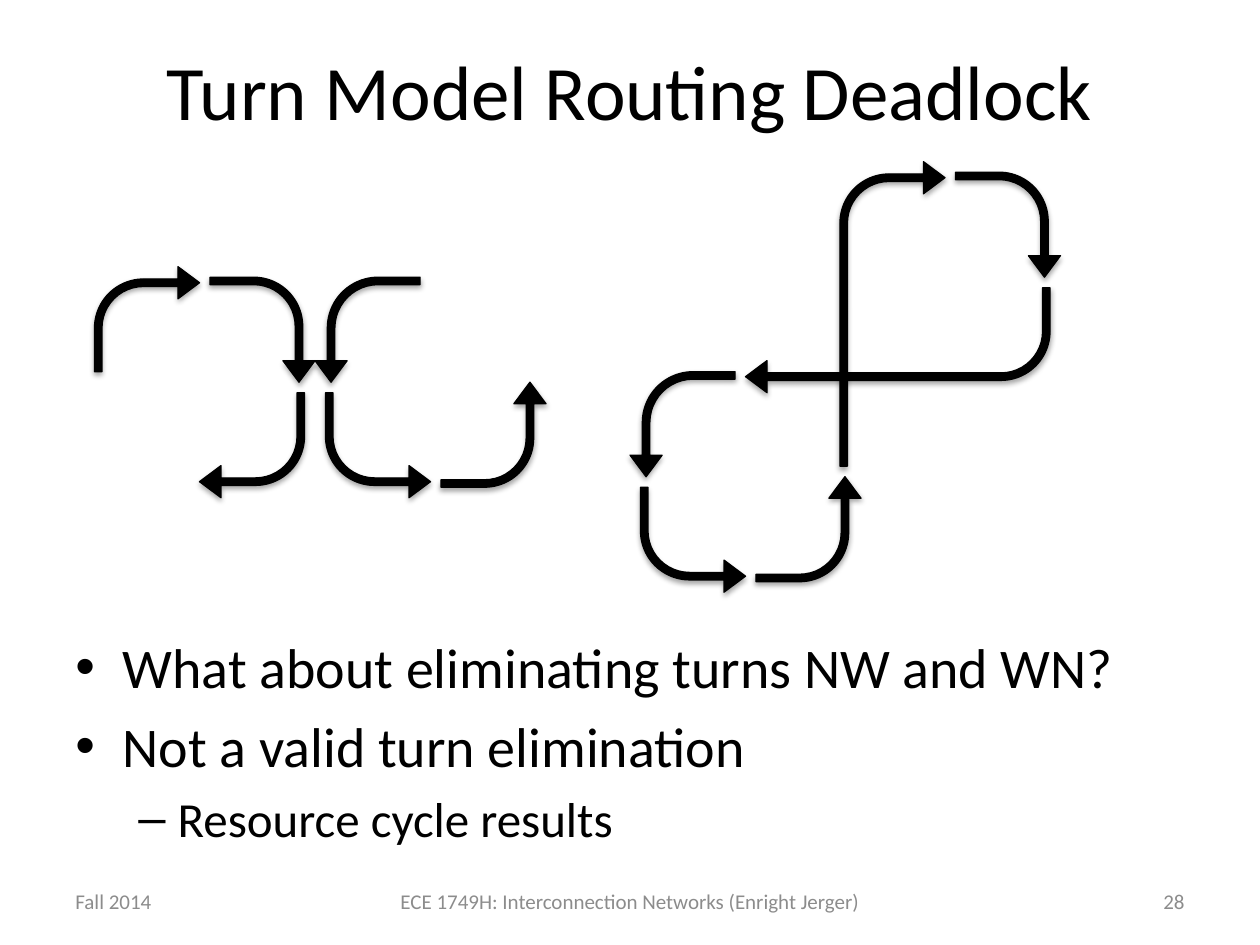
import pptx
import pptx.dml.color
import pptx.enum.shapes
import pptx.enum.text
import pptx.oxml
import pptx.oxml.ns
import pptx.util

Pt = pptx.util.Pt
ALIGN = pptx.enum.text.PP_ALIGN
ANCHOR = pptx.enum.text.MSO_ANCHOR
BLACK = pptx.dml.color.RGBColor(0, 0, 0)
GRAY = pptx.dml.color.RGBColor(0x8C, 0x8C, 0x8C)
FONT = "Calibri"
TURN = 60
LONG_TURN = 174

SHADOW = (
    f'<a:effectLst {pptx.oxml.ns.nsdecls("a")}>'
    '<a:outerShdw blurRad="40000" dist="23000" dir="5400000" rotWithShape="0">'
    '<a:srgbClr val="000000"><a:alpha val="35000"/></a:srgbClr>'
    "</a:outerShdw></a:effectLst>"
)

# Each turn: x, y, width, height, rotation, mirrored
TURN_PAIR = [
    (60, 72, TURN, TURN, 180, False),
    (66, 6, TURN, TURN, 90, False),
    (0, 0, TURN, TURN, 0, False),
    (126, 6, TURN, TURN, 270, True),
    (198, 66, TURN, TURN, 90, True),
    (132, 72, TURN, TURN, 180, True),
]
RESOURCE_CYCLE = [
    (120, 0, TURN, LONG_TURN, 0, False),
    (186, 6, TURN, TURN, 90, False),
    (66, 72, LONG_TURN, TURN, 180, False),
    (0, 120, TURN, TURN, 270, True),
    (6, 186, TURN, TURN, 180, True),
    (72, 180, TURN, TURN, 90, True),
]
BULLETS = [
    ("What about eliminating turns NW and WN?", "•", 32, 27, 27),
    ("Not a valid turn elimination", "•", 32, 27, 27),
    ("Resource cycle results", "–", 28, 58.5, 22.5),
]


def format_paragraph(paragraph, size, color, alignment=ALIGN.LEFT):
    """Set the alignment of a paragraph and the font of its runs."""
    paragraph.alignment = alignment
    for run in paragraph.runs:
        run.font.name = FONT
        run.font.size = Pt(size)
        run.font.color.rgb = color


def add_text(slide, box, text, size, color, alignment):
    """Add one line of text, vertically centred in the box."""
    text_frame = slide.shapes.add_textbox(*map(Pt, box)).text_frame
    text_frame.word_wrap = True
    text_frame.vertical_anchor = ANCHOR.MIDDLE
    text_frame.text = text
    format_paragraph(text_frame.paragraphs[0], size, color, alignment)


def add_bullets(slide, box):
    """Add the bulleted conclusions."""
    text_frame = slide.shapes.add_textbox(*map(Pt, box)).text_frame
    text_frame.word_wrap = True
    text_frame.text = "\n".join(text for text, *_ in BULLETS)
    for paragraph, (_, bullet, size, margin, hanging) in zip(text_frame.paragraphs, BULLETS):
        format_paragraph(paragraph, size, BLACK)
        paragraph.space_before = Pt(size * 0.2)
        properties = paragraph._p.get_or_add_pPr()
        properties.set("marL", str(Pt(margin)))
        properties.set("indent", str(-Pt(hanging)))
        properties.append(pptx.oxml.parse_xml(
            f'<a:buFont {pptx.oxml.ns.nsdecls("a")} typeface="Arial"/>'))
        properties.append(pptx.oxml.parse_xml(
            f'<a:buChar {pptx.oxml.ns.nsdecls("a")} char="{bullet}"/>'))


def add_turns(slide, left, top, turns):
    """Add a group of bent arrows relative to its top left corner."""
    for x, y, width, height, rotation, mirrored in turns:
        arrow = slide.shapes.add_shape(
            pptx.enum.shapes.MSO_SHAPE.BENT_ARROW,
            Pt(left + x), Pt(top + y), Pt(width), Pt(height))
        bend = 0.483 if rotation == 270 else 0.467
        for index, value in enumerate((0.071, 0.153, 0.205, bend)):
            arrow.adjustments[index] = value
        arrow.rotation = rotation
        if mirrored:
            arrow._element.spPr.xfrm.set("flipH", "1")
        arrow.fill.solid()
        arrow.fill.fore_color.rgb = BLACK
        arrow.line.color.rgb = BLACK
        arrow.line.width = Pt(0.75)
        arrow._element.spPr.append(pptx.oxml.parse_xml(SHADOW))


def add_footer(slide, left, top, width, height):
    """Add the date, course name and slide number."""
    side = 168
    middle = width - 2 * side
    parts = [
        ("Fall 2014", 0, side, ALIGN.LEFT),
        ("28", side + middle, side, ALIGN.RIGHT),
        ("ECE 1749H: Interconnection Networks (Enright Jerger)", side, middle, ALIGN.CENTER),
    ]
    for text, x, part_width, alignment in parts:
        add_text(slide, (left + x, top, part_width, height), text, 12, GRAY, alignment)


def main():
    """Build and save the slide."""
    presentation = pptx.Presentation()
    presentation.slide_width, presentation.slide_height = Pt(720), Pt(540)
    slide = presentation.slides.add_slide(presentation.slide_layouts[6])
    add_text(slide, (36, 6, 648, 90), "Turn Model Routing Deadlock", 44, BLACK, ALIGN.CENTER)
    add_bullets(slide, (36, 358, 648, 124.5))
    add_turns(slide, 54, 152.4, TURN_PAIR)
    add_turns(slide, 360, 92.4, RESOURCE_CYCLE)
    add_footer(slide, 36, 500.5, 648, 28.75)
    presentation.save("out.pptx")


if __name__ == "__main__":
    main()
